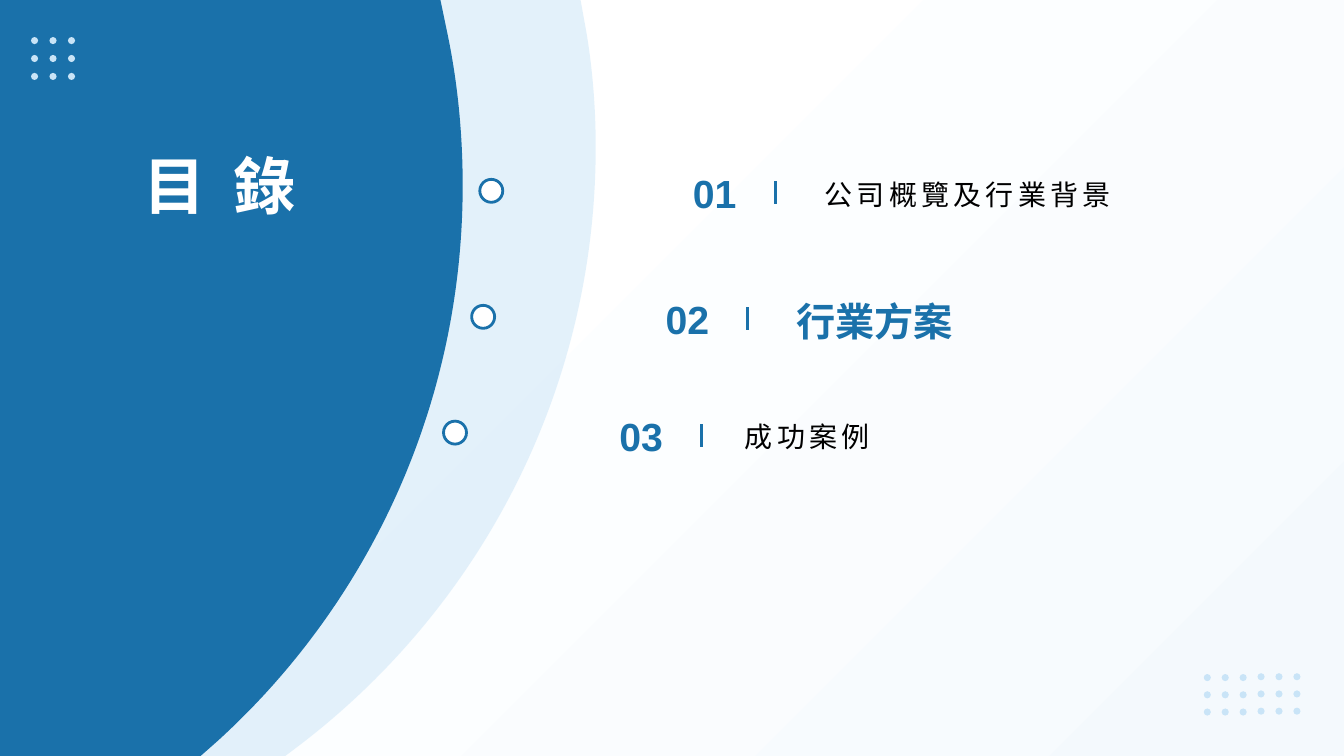
from dataclasses import dataclass

from lxml.etree import SubElement as sub
from pptx import Presentation
from pptx.dml.color import RGBColor as RGB
from pptx.enum.shapes import MSO_CONNECTOR as LINK, MSO_SHAPE as KIND
from pptx.enum.text import MSO_ANCHOR as ANCHOR, PP_ALIGN as ALIGN
from pptx.oxml.ns import qn
from pptx.util import Pt


@dataclass(frozen=True)
class Theme:
    font: str = "Arial"
    blue: RGB = RGB(0x1A, 0x71, 0xAA)
    pale: RGB = RGB(0xC9, 0xE4, 0xF7)
    mist: RGB = RGB(0xF4, 0xF9, 0xFD)
    white: RGB = RGB(0xFF, 0xFF, 0xFF)
    black: RGB = RGB(0, 0, 0)
    head: float = 44.5
    big: float = 28
    body: float = 20


theme = Theme()
WIDE, HIGH = 960, 540

deck = Presentation()
deck.slide_width, deck.slide_height = Pt(WIDE), Pt(HIGH)
slide = deck.slides.add_slide(deck.slide_layouts[6])
shapes = slide.shapes


def trace(loops, color):
    """Fill closed loops; a step of one point is a line, of three a Bezier curve."""
    pen = None
    for (start,), *steps in loops:
        first = [Pt(n) for n in start]
        if pen is None:
            pen = shapes.build_freeform(*first)
        else:
            pen.move_to(*first)
        pen.add_line_segments([(Pt(x), Pt(y)) for step in steps for x, y in step])
        pen.add_line_segments([], close=True)
    shape = pen.convert_to_shape()
    lines = iter(list(shape._element.iter(qn("a:lnTo"))))
    for _, *steps in loops:
        for step in steps:
            lead, *rest = [next(lines) for _ in step]
            if rest:
                lead.tag = qn("a:cubicBezTo")
            for line in rest:
                lead.append(line[0])
                line.getparent().remove(line)
    shape.shadow.inherit = False
    shape.fill.solid()
    shape.fill.fore_color.rgb = color
    shape.line.fill.background()
    return shape


def write(box, runs, size, color, bold=True, align=ALIGN.LEFT,
          anchor=ANCHOR.MIDDLE, wrap=True, lead=1.0):
    """Add a text box; runs are pairs of text and letter spacing."""
    frame = shapes.add_textbox(*map(Pt, box)).text_frame
    look = dict(margin_left=0, margin_right=0, margin_top=0, margin_bottom=0,
                word_wrap=wrap, vertical_anchor=anchor)
    for key, value in look.items():
        setattr(frame, key, value)
    para = frame.paragraphs[0]
    para.alignment, para.line_spacing = align, lead
    for text, gap in runs:
        run = para.add_run()
        run.text = text
        for key, value in dict(name=theme.font, size=Pt(size), bold=bold).items():
            setattr(run.font, key, value)
        run.font.color.rgb = color
        if gap:
            run.font._element.set("spc", str(gap * 100))


# Background
back = shapes.add_shape(KIND.RECTANGLE, 0, 0, Pt(WIDE), Pt(HIGH))
back.shadow.inherit = False
back.line.fill.background()
back.fill.gradient()
back.fill.gradient_angle = 315
for stop, place, color in zip(back.fill.gradient_stops, (0.3, 1),
                              (theme.white, theme.mist)):
    stop.position = place
    stop.color.rgb = color

# Curved panels: steps from the top edge down to the bottom edge
panels = [
    (theme.pale, 50, [
        [(414.7, 0)], [(419, 23.8)],
        [(423.4, 50.4), (425.5, 77.8), (425.5, 105.1)],
        [(425.5, 281.5), (340.6, 437.8), (209.5, 535.7)], [(203.8, HIGH)]]),
    (theme.blue, 100, [
        [(314.6, 0)], [(319.7, 24.5)],
        [(326.9, 59), (330.5, 95.8), (330.5, 132.5)],
        [(330.5, 290.2), (262.8, 432), (154.8, 529.9)], [(143.3, HIGH)]]),
]
for color, alpha, edge in panels:
    panel = trace([[[(0, 0)], *edge, [(0, HIGH)]]], color)
    if alpha < 100:
        tint = next(panel._element.spPr.iter(qn("a:srgbClr")))
        sub(tint, qn("a:alpha"), val=str(alpha * 1000))

# Dot grids: first centre, pitch, columns, lift of columns after the third
R, K = 2.55, 1.41
ROUND = [[(0, -R)],
         [(K, -R), (R, -K), (R, 0)], [(R, K), (K, R), (0, R)],
         [(-K, R), (-R, K), (-R, 0)], [(-R, -K), (-K, -R), (0, -R)]]
for left, top, across, down, cols, lift in [
    (24.7, 29, 13.2, 12.8, 3, 0),
    (862.4, 484, 12.8, 12.3, 6, 0.6),
]:
    loops = []
    for row in range(3):
        for col in range(cols):
            x = left + col * across
            y = top + row * down - (lift if col > 2 else 0)
            loops.append([[(x + dx, y + dy) for dx, dy in step] for step in ROUND])
    trace(loops, theme.pale)

write((41.8, 73.4, 230.4, 85), [("目 ", 5), ("錄", 0)], theme.head, theme.white,
      align=ALIGN.CENTER, anchor=ANCHOR.BOTTOM)

# Agenda: label, spacing, ring corner, number corner, label corner, width, leading
plain = dict(size=theme.body, color=theme.black, bold=False)
strong = dict(size=theme.big, color=theme.blue, bold=True)
items = [
    ("公司概覽及行業背景", 3, (342.7, 128.1), (478.1, 110.2), (589, 110.2),
     322.6, 1.1, plain),
    ("行業方案", 0, (336.9, 218.1), (458.6, 200.2), (568.8, 200.2),
     360.7, 1.1, strong),
    ("成功案例", 3, (316.8, 300.8), (425.5, 283.7), (532.1, 284.4),
     322.6, 1.0, plain),
]
TALL, RING = 54.7, 16.4
for count, item in enumerate(items, 1):
    label, gap, ring, (num, top), spot, width, lead, style = item
    disc = shapes.add_shape(KIND.OVAL, *map(Pt, (*ring, RING, RING)))
    disc.shadow.inherit = False
    disc.fill.solid()
    disc.fill.fore_color.rgb = theme.white
    write((num, top, 64.8, TALL), [(f"{count:02}", 0)], theme.big, theme.blue,
          align=ALIGN.CENTER, wrap=False)
    write((*spot, width, TALL), [(label, gap)], lead=lead, **style)
    x = num + 75.6
    rule = shapes.add_connector(LINK.STRAIGHT, Pt(x), Pt(top + 19.4),
                                Pt(x), Pt(top + 35.6))
    for mark in (disc, rule):
        mark.line.color.rgb = theme.blue
        mark.line.width = Pt(2)
    sub(rule._element.spPr, qn("a:effectLst"))

deck.save("out.pptx")
